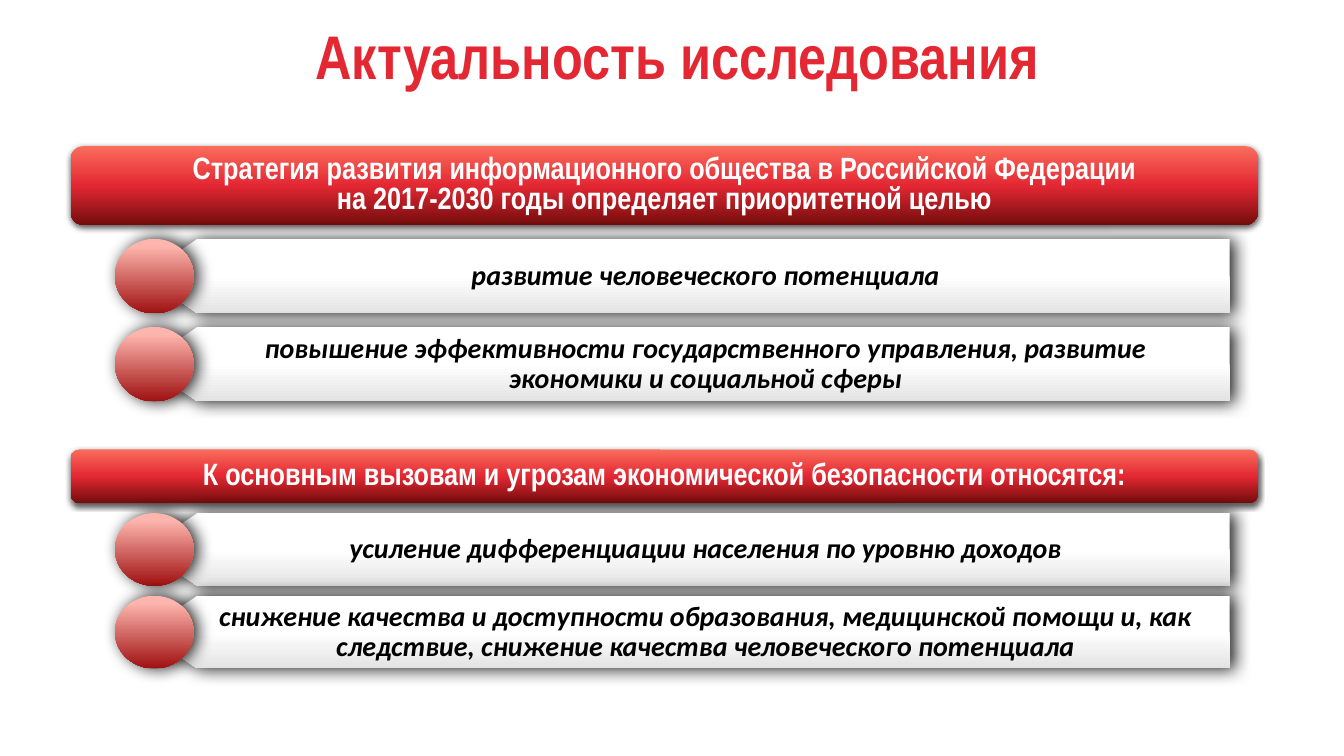
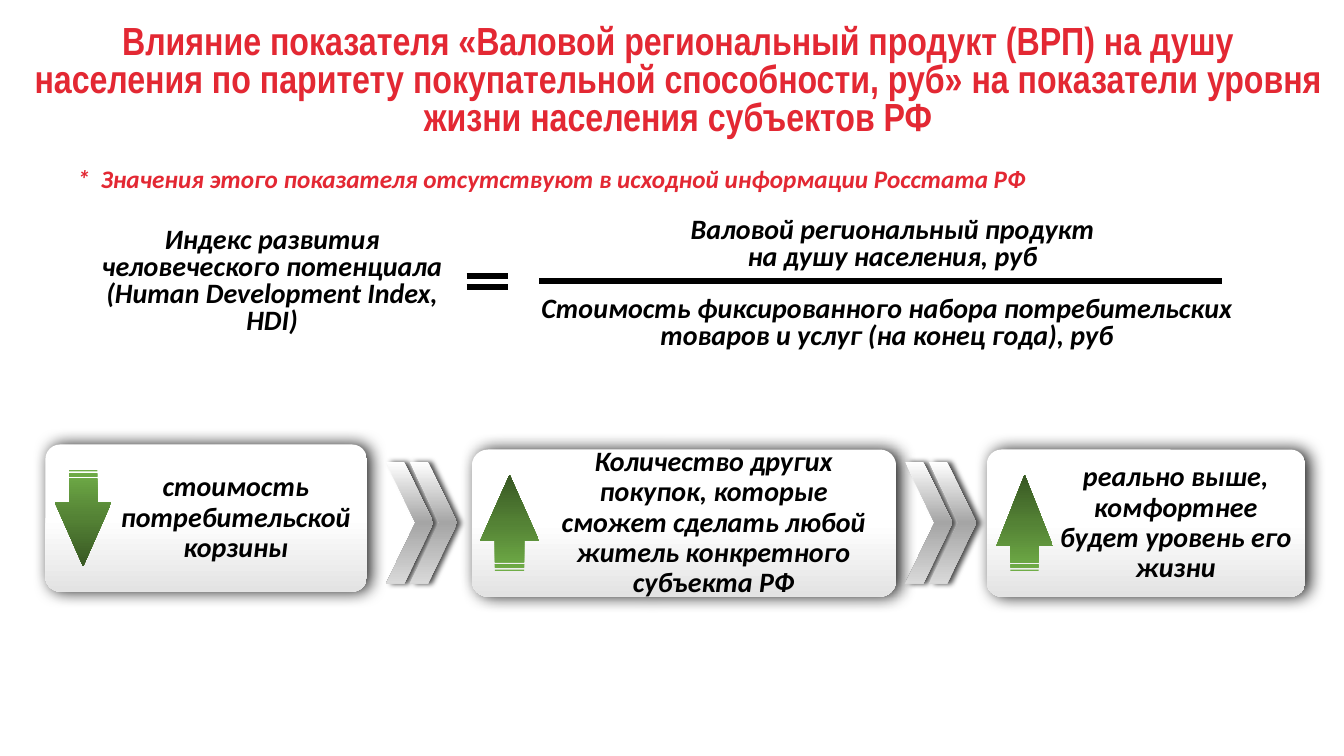
from lxml import etree
from pptx import Presentation
from pptx import util as u
from pptx.dml.color import RGBColor
from pptx.enum import shapes as s, text as t
from pptx.oxml import parse_xml
from pptx.oxml.ns import qn


class Look:
    red = "E32833"
    black = "000000"
    white = "FFFFFF"
    head = [(0, "FA6C5C"), (50, red), (100, "740C0C")]
    panel = [(0, white), (50, white), (100, "E3E3E3")]
    dot = [(10, "FDB5AD"), (100, "9F1111")]
    green = [(0, "70AD47"), (50, "548235"), (100, "385723")]
    steel = [(0, white), (50, "A5A5A5"), (100, "D9D9D9")]
    soft = (63, 4.5, 1.5, 90)
    deep = (87, 12, 3, 0)
    slim = (70, 4, 3, 0)
    narrow = "Arial Narrow"
    body = "Calibri"
    big, title, band, text, note = 44, 28, 22, 20, 18


NS = 'xmlns:a="http://schemas.openxmlformats.org/drawingml/2006/main"'


def paint(shape, stops, angle, shade=None):
    marks = "".join(
        f'<a:gs pos="{pos * 1000}"><a:srgbClr val="{tint}"/></a:gs>' for pos, tint in stops)
    props = shape._element.spPr
    props.append(parse_xml(
        f'<a:gradFill {NS} rotWithShape="1"><a:gsLst>{marks}</a:gsLst>'
        f'<a:lin ang="{angle * 60000}" scaled="0"/></a:gradFill>'))
    shape.line.fill.background()
    shape.shadow.inherit = False
    if shade:
        alpha, blur, dist, way = shade
        props.find(qn("a:effectLst")).append(parse_xml(
            f'<a:outerShdw {NS} blurRad="{u.Pt(blur)}" dist="{u.Pt(dist)}" dir="{way * 60000}" '
            f'algn="ctr" rotWithShape="0"><a:srgbClr val="{Look.black}">'
            f'<a:alpha val="{alpha * 1000}"/></a:srgbClr></a:outerShdw>'))


def write(shape, lines, size=Look.text, face=Look.body, tint=Look.black, space=0.8,
          left=7.2, right=7.2, edge=3.6):
    frame = shape.text_frame
    frame.word_wrap = True
    frame.vertical_anchor = t.MSO_ANCHOR.MIDDLE
    frame.margin_left, frame.margin_right = u.Pt(left), u.Pt(right)
    frame.margin_top = frame.margin_bottom = u.Pt(edge)
    for i, line in enumerate(lines):
        para = frame.add_paragraph() if i else frame.paragraphs[0]
        para.text = line
        para.alignment = t.PP_ALIGN.CENTER
        para.line_spacing = space
        font = para.font
        font.size, font.name, font.bold = u.Pt(size), face, True
        font.italic = face == Look.body
        font.color.rgb = RGBColor.from_string(tint)
    return frame


deck = Presentation()
deck.slide_width, deck.slide_height = u.Pt(960), u.Pt(540)
heads = [
    ("Актуальность исследования", Look.big, 67),
    ("Влияние показателя «Валовой региональный продукт (ВРП) на душу населения по паритету "
     "покупательной способности, руб» на показатели уровня жизни населения субъектов РФ",
     Look.title, 96),
]
pages = []
for words, size, high in heads:
    page = deck.slides.add_slide(deck.slide_layouts[6])
    box = page.shapes.add_textbox(u.Pt(17.3), u.Pt(10.8), u.Pt(933.8), u.Pt(high))
    write(box, [words], size, Look.narrow, Look.red)
    pages.append(page.shapes)
goals, chain = pages

groups = [
    (104.4, 56.2, 170.6, 53.2, 62.9,
     ["Стратегия развития информационного общества в Российской Федерации",
      "на 2017-2030 годы определяет приоритетной целью"],
     ["развитие человеческого потенциала",
      "повышение эффективности государственного управления, развитие экономики "
      "и социальной сферы"]),
    (321.1, 38.2, 366.5, 52, 59,
     ["К основным вызовам и угрозам экономической безопасности относятся:"],
     ["усиление дифференциации населения по уровню доходов",
      "снижение качества и доступности образования, медицинской помощи и, как следствие, "
      "снижение качества человеческого потенциала"]),
]
start, notch, end = 102.2, 141, 878.4
for top, high, first, tall, step, lead, items in groups:
    band = goals.add_shape(s.MSO_SHAPE.ROUNDED_RECTANGLE,
                           u.Pt(50.4), u.Pt(top), u.Pt(848.2), u.Pt(high))
    paint(band, Look.head, 90, Look.soft)
    write(band, lead, Look.band, Look.narrow, Look.white)
    for i, item in enumerate(items):
        y = first + i * step
        pen = goals.build_freeform(u.Pt(end), u.Pt(y + tall))
        pen.add_line_segments([(u.Pt(a), u.Pt(b)) for a, b in [
            (notch, y + tall), (start, y + tall / 2), (notch, y), (end, y)]])
        tag = pen.convert_to_shape()
        paint(tag, Look.panel, 90, Look.deep)
        write(tag, [item], space=0.9, left=38.9, right=11.5, edge=5.8)
        dot = goals.add_shape(s.MSO_SHAPE.OVAL, u.Pt(82.1), u.Pt(y), u.Pt(56.2), u.Pt(tall))
        paint(dot, Look.dot, 90, Look.deep)

terms = [
    (61.2, 160.6, 266.4, 82.1, 7.2,
     ["Индекс развития человеческого потенциала", "(Human Development Index, HDI)"]),
    (385.2, 154.8, 504.7, 40.3, 5.8,
     ["Валовой региональный продукт", "на душу населения, руб"]),
    (377.3, 206.6, 512.6, 49, 5.8,
     ["Стоимость фиксированного набора потребительских товаров и услуг (на конец года), руб"]),
]
for x, y, wide, high, pad, lines in terms:
    box = chain.add_textbox(u.Pt(x), u.Pt(y), u.Pt(wide), u.Pt(high))
    write(box, lines, left=pad, right=pad)

for x, far, y in [(385.2, 872.6, 200.9), (333.4, 362.9, 197.3), (333.4, 362.9, 205.2)]:
    rule = chain.add_connector(s.MSO_CONNECTOR.STRAIGHT, u.Pt(x), u.Pt(y), u.Pt(far), u.Pt(y))
    rule.line.width = u.Pt(4.5)
    rule.line.color.rgb = RGBColor.from_string(Look.black)
    etree.SubElement(rule._element.spPr, qn("a:effectLst"))

note = chain.add_textbox(u.Pt(48.2), u.Pt(113), u.Pt(776.9), u.Pt(28.8))
frame = write(note, ["*\tЗначения этого показателя отсутствуют в исходной информации Росстата РФ"],
              Look.note, tint=Look.red, space=1)
frame.vertical_anchor = t.MSO_ANCHOR.TOP
para = frame.paragraphs[0]
para.alignment = t.PP_ALIGN.LEFT
props = para._p.get_or_add_pPr()
props.set("marL", str(u.Pt(16.7)))
props.set("indent", str(-u.Pt(16.7)))

cards = [
    (32.4, 317.5, 229.7, 0.1, 90, 40.3, 1.13, "стоимость потребительской корзины"),
    (337, 321.1, 303.1, 0.11, 270, 41.8, 1.12,
     "Количество других покупок, которые сможет сделать любой житель конкретного субъекта РФ"),
    (704.9, 321.1, 227.5, 0.1, 270, 40.3, 1.26,
     "реально выше, комфортнее будет уровень его жизни"),
]
tall, long = 105.1, 69.1
for x, y, wide, curve, turn, thick, tip, words in cards:
    card = chain.add_shape(s.MSO_SHAPE.ROUNDED_RECTANGLE,
                           u.Pt(x), u.Pt(y), u.Pt(wide), u.Pt(tall))
    card.adjustments[0] = curve
    paint(card, Look.panel, 90, Look.deep)
    write(card, [words], space=0.9, left=48.2, right=5.8, edge=5.8)
    arrow = chain.add_shape(s.MSO_SHAPE.STRIPED_RIGHT_ARROW,
                            u.Pt(x + 27 - long / 2), u.Pt(y + (tall - thick) / 2),
                            u.Pt(long), u.Pt(thick))
    arrow.rotation = turn
    arrow.adjustments[0], arrow.adjustments[1] = 0.5, tip
    paint(arrow, Look.green, 0)

for x in (646.6, 275.8):
    for shift in (0, 17):
        mark = chain.add_shape(s.MSO_SHAPE.CHEVRON,
                               u.Pt(x + shift), u.Pt(329.8), u.Pt(33.8), u.Pt(87.1))
        mark.adjustments[0] = 0.62
        paint(mark, Look.steel, 90, Look.slim)

deck.save("out.pptx")
